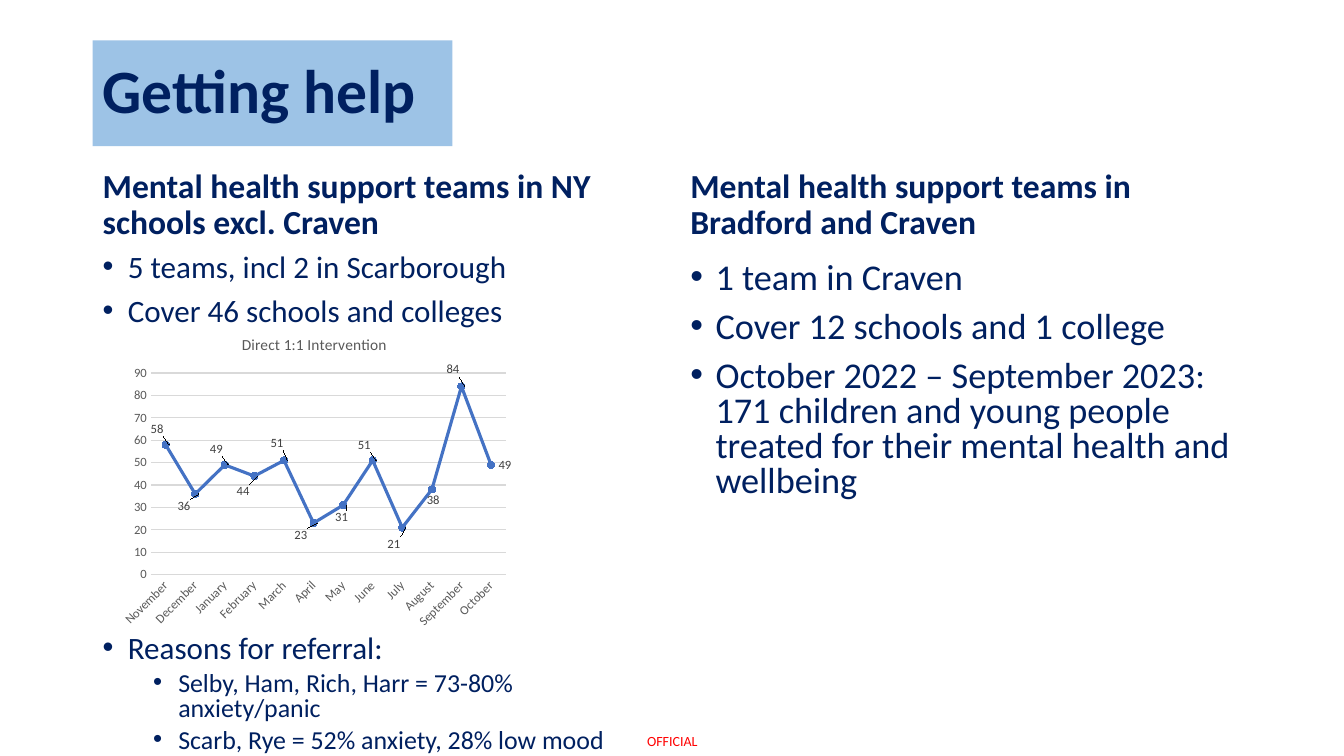
from lxml import etree
from pptx import Presentation
from pptx.chart import data
from pptx.dml import color
from pptx.enum import chart as ch, shapes, text
from pptx.oxml import ns
from pptx.util import Pt

COLORS = {"navy": "002060", "sky": "9DC3E6", "red": "FF0000", "line": "4472C4",
          "grid": "D9D9D9", "axis": "595959", "label": "404040"}
FONT = "Calibri"
TITLE = "Getting help"
MARKING = "OFFICIAL"
HEADINGS = [
    ("Mental health support teams in NY schools excl. Craven", 66.24, 406),
    ("Mental health support teams in Bradford and Craven", 486, 408),
]
BULLETS = [
    ((66.24, 178.56, 406, 60), [
        (0, 22.2, "5 teams, incl 2 in Scarborough"),
        (0, 22.2, "Cover 46 schools and colleges")]),
    ((66.24, 450.7, 406, 100), [
        (0, 22.2, "Reasons for referral:"),
        (1, 18.5, "Selby, Ham, Rich, Harr = 73-80% anxiety/panic"),
        (1, 18.5, "Scarb, Rye = 52% anxiety, 28% low mood")]),
    ((486, 184.32, 408, 303), [
        (0, 25.9, "1 team in Craven"),
        (0, 25.9, "Cover 12 schools and 1 college"),
        (0, 25.9, "October 2022 – September 2023: 171 children and young people "
                  "treated for their mental health and wellbeing")]),
]
CHART_TITLE = "Direct 1:1 Intervention"
CHART_BOX = (82.08, 228.24, 285, 225)
PLOT_AREA = {"x": 0.09, "y": 0.17, "w": 0.89, "h": 0.64}
INTERVENTIONS = [
    ("November", 58, (-16, -11)), ("December", 36, (-18, 9)),
    ("January", 49, (-16, -11)), ("February", 44, (-18, 11)),
    ("March", 51, (-15, -12)), ("April", 23, (-19, 9)),
    ("May", 31, (-11, 9)), ("June", 51, (-16, -11)),
    ("July", 21, (-16, 12)), ("August", 38, (-9, 8)),
    ("September", 84, (-16, -12)), ("October", 49, None),
]


def rgb(name):
    return color.RGBColor.from_string(COLORS[name])


def style(font, size, tint, bold=False):
    font.name, font.size, font.bold = FONT, Pt(size), bold
    font.color.rgb = rgb(tint)


def add_text(box, anchor):
    frame = slide.shapes.add_textbox(*map(Pt, box)).text_frame
    frame.word_wrap = True
    frame.vertical_anchor = anchor
    return frame


def add_bullets(box, items):
    frame = add_text(box, text.MSO_ANCHOR.TOP)
    for i, (level, size, wording) in enumerate(items):
        item = frame.add_paragraph() if i else frame.paragraphs[0]
        item.text, item.level = wording, level
        item.line_spacing = 0.8
        item.space_before = Pt(5 if level else 10)
        style(item.font, size, "navy")
        props = item._p.get_or_add_pPr()
        props.set("marL", str(Pt(18 + 36 * level)))
        props.set("indent", str(Pt(-18)))
        bullet_font = etree.Element(ns.qn("a:buFont"), typeface="Arial")
        bullet = etree.Element(ns.qn("a:buChar"), char="•")
        props.find(ns.qn("a:defRPr")).addprevious(bullet_font)
        bullet_font.addnext(bullet)


def manual_layout(values, inner=False):
    layout = etree.Element(ns.qn("c:layout"))
    manual = etree.SubElement(layout, ns.qn("c:manualLayout"))
    if inner:
        settings = {"layoutTarget": "inner", "xMode": "edge", "yMode": "edge", **values}
    else:
        settings = values
    for key, value in settings.items():
        etree.SubElement(manual, ns.qn("c:" + key), val=str(value))
    return layout


def add_interventions_chart():
    chart_data = data.CategoryChartData()
    chart_data.categories = [month for month, _, _ in INTERVENTIONS]
    chart_data.add_series("Series 1", [count for _, count, _ in INTERVENTIONS])
    chart = slide.shapes.add_chart(
        ch.XL_CHART_TYPE.LINE_MARKERS, *map(Pt, CHART_BOX), chart_data).chart
    chart.font.name, chart.font.size = FONT, Pt(10)
    chart.has_legend = False
    chart.has_title = True
    heading = chart.chart_title.text_frame.paragraphs[0]
    heading.text = CHART_TITLE
    style(heading.font, 11, "axis")

    months, counts = chart.category_axis, chart.value_axis
    for axis in (months, counts):
        axis.major_tick_mark = axis.minor_tick_mark = ch.XL_TICK_MARK.NONE
        style(axis.tick_labels.font, 9, "axis")
    months._element.txPr.bodyPr.set("rot", "-2700000")
    counts.minimum_scale, counts.maximum_scale, counts.major_unit = 0, 90, 10
    counts.format.line.fill.background()
    for line in (months.format.line, counts.major_gridlines.format.line):
        line.color.rgb, line.width = rgb("grid"), Pt(0.75)

    plot = chart.plots[0]
    plot.vary_by_categories = False
    series = plot.series[0]
    series.smooth = False
    series.format.line.color.rgb, series.format.line.width = rgb("line"), Pt(2.25)
    marker = series.marker
    marker.style, marker.size = ch.XL_MARKER_STYLE.CIRCLE, 5
    marker.format.fill.solid()
    marker.format.fill.fore_color.rgb = rgb("line")
    marker.format.line.color.rgb = rgb("line")

    labels = series.data_labels
    labels.show_value = True
    labels.position = ch.XL_LABEL_POSITION.RIGHT
    style(labels.font, 9, "label")
    for i, (_, _, shift) in enumerate(INTERVENTIONS):
        if shift:
            label = series.points[i].data_label
            style(label.font, 9, "label")
            label.position = ch.XL_LABEL_POSITION.RIGHT
            offset = {"x": round(shift[0] / CHART_BOX[2], 4),
                      "y": round(shift[1] / CHART_BOX[3], 4)}
            entry = labels._element.xpath(f'c:dLbl[c:idx/@val="{i}"]')[0]
            entry.insert(1, manual_layout(offset))

    area = chart._chartSpace.chart.plotArea
    for layout in area.findall(ns.qn("c:layout")):
        area.remove(layout)
    area.insert(0, manual_layout(PLOT_AREA, inner=True))


prs = Presentation()
prs.slide_width, prs.slide_height = Pt(960), Pt(540)
slide = prs.slides.add_slide(prs.slide_layouts[6])

marking = add_text((451.44, 519.12, 57.6, 20.88), text.MSO_ANCHOR.MIDDLE)
marking.margin_left = marking.margin_right = marking.margin_top = marking.margin_bottom = 0
marking.text = MARKING
marking.paragraphs[0].alignment = text.PP_ALIGN.CENTER
style(marking.paragraphs[0].font, 10, "red")

for wording, left, width in HEADINGS:
    heading = add_text((left, 111.6, width, 64.8), text.MSO_ANCHOR.BOTTOM)
    heading.text = wording
    heading.paragraphs[0].line_spacing = 0.9
    style(heading.paragraphs[0].font, 24, "navy", bold=True)

for box, items in BULLETS:
    add_bullets(box, items)

banner = slide.shapes.add_shape(
    shapes.MSO_SHAPE.RECTANGLE, Pt(66.24), Pt(28.8), Pt(257), Pt(75.6))
banner.shadow.inherit = False
banner.fill.solid()
banner.fill.fore_color.rgb = rgb("sky")
banner.line.fill.background()
banner.text_frame.text = TITLE
banner.text_frame.vertical_anchor = text.MSO_ANCHOR.MIDDLE
title = banner.text_frame.paragraphs[0]
title.alignment, title.line_spacing = text.PP_ALIGN.LEFT, 0.9
style(title.font, 44, "navy", bold=True)

add_interventions_chart()
prs.save("out.pptx")
